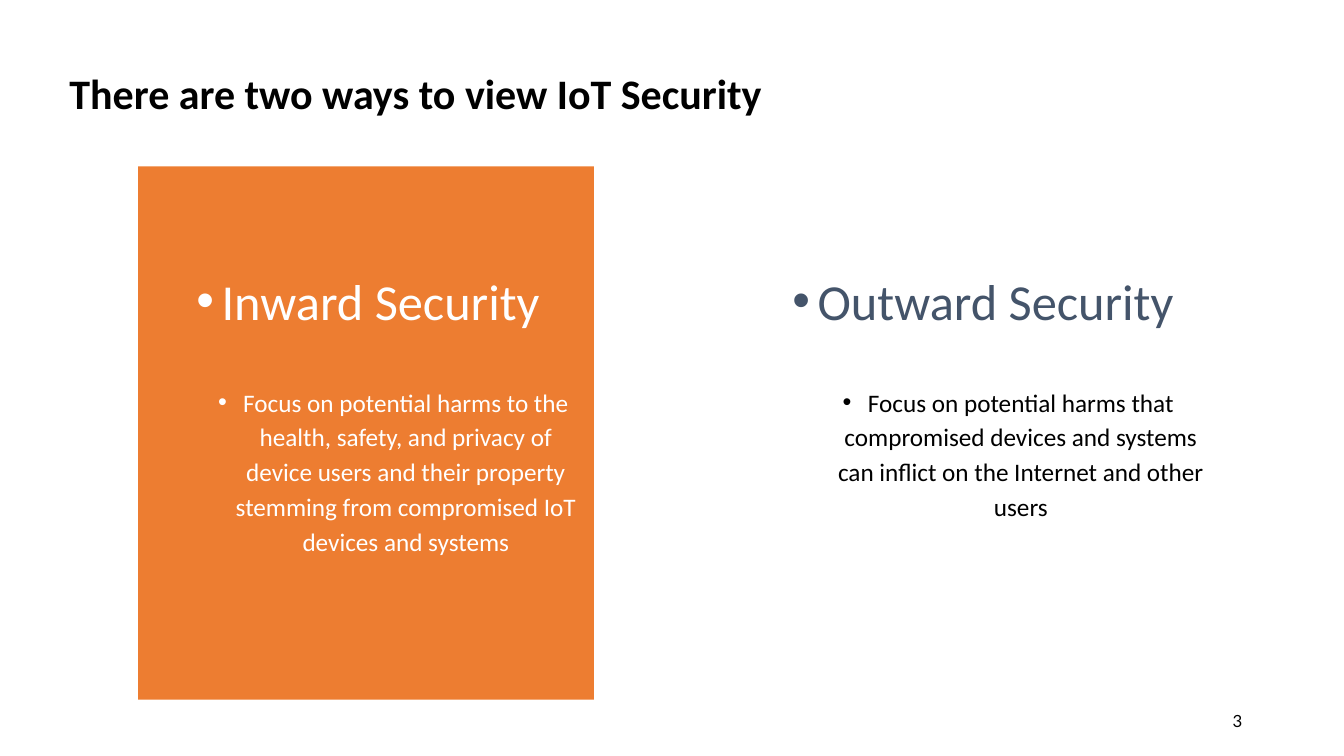
from lxml import etree
from pptx import Presentation
from pptx.dml.color import RGBColor
from pptx.enum.shapes import MSO_SHAPE
from pptx.enum.text import MSO_ANCHOR, PP_ALIGN
from pptx.oxml.ns import qn
from pptx.util import Inches, Pt

RECT = MSO_SHAPE.RECTANGLE
TOP, MIDDLE = MSO_ANCHOR.TOP, MSO_ANCHOR.MIDDLE
LEFT, CENTER, RIGHT = PP_ALIGN.LEFT, PP_ALIGN.CENTER, PP_ALIGN.RIGHT
COLORS = {"black": "000000", "white": "FFFFFF", "slate": "44546A", "orange": "ED7D31"}
HEAD = {"line_spacing": 1.15, "space_before": Pt(10), "space_after": Pt(32)}
BODY = {"line_spacing": 1.15, "space_before": Pt(5), "space_after": Pt(0)}


def color(name):
    """Return the named colour."""
    return RGBColor.from_string(COLORS[name])


def set_all(item, values):
    """Set each attribute of an item from a dict."""
    for name, value in values.items():
        setattr(item, name, value)


def write(para, text, size, tint, align, font="Calibri", bold=False, **space):
    """Fill a paragraph with one formatted run."""
    set_all(para, {"alignment": align, **space})
    run = para.add_run()
    run.text = text
    set_all(run.font, {"name": font, "size": Pt(size), "bold": bold})
    run.font.color.rgb = color(tint)


def add_bullet(para, indent):
    """Give a paragraph a hanging bullet."""
    props = para._p.get_or_add_pPr()
    props.set("marL", str(Inches(indent)))
    props.set("indent", str(Inches(-0.25)))
    font = etree.SubElement(props, qn("a:buFont"))
    font.set("typeface", "Arial")
    mark = etree.SubElement(props, qn("a:buChar"))
    mark.set("char", "•")


def add_label(slide, box, text, size, align, **style):
    """Add a single line of text, centred vertically."""
    frame = slide.shapes.add_textbox(*map(Inches, box)).text_frame
    set_all(frame, {"word_wrap": True, "vertical_anchor": MIDDLE})
    write(frame.paragraphs[0], text, size, "black", align, **style)


def add_panel(slide, left, width, pads, fill, head, body):
    """Add a filled panel with a bulleted heading and body."""
    box = map(Inches, (left, 1.65, width, 5.29))
    panel = slide.shapes.add_shape(RECT, *box)
    panel.shadow.inherit = False
    panel.fill.solid()
    panel.fill.fore_color.rgb = color(fill)
    panel.line.fill.background()
    frame = panel.text_frame
    set_all(frame, {
        "word_wrap": True, "vertical_anchor": TOP,
        "margin_left": Inches(pads[0]), "margin_right": Inches(pads[1]),
        "margin_top": Inches(0.94), "margin_bottom": Inches(0.05),
    })
    title, detail = frame.paragraphs[0], frame.add_paragraph()
    detail.level = 1
    write(title, head[0], 36, head[1], CENTER, **HEAD)
    write(detail, body[0], 18, body[1], CENTER, **BODY)
    add_bullet(title, 0.25)
    add_bullet(detail, 0.75)


def main():
    """Build and save the slide."""
    deck = Presentation()
    set_all(deck, {"slide_width": Inches(13.33), "slide_height": Inches(7.5)})
    slide = deck.slides.add_slide(deck.slide_layouts[6])
    add_label(slide, (0.59, 0.62, 12.16, 0.67),
              "There are two ways to view IoT Security", 30, LEFT,
              bold=True, line_spacing=0.9)
    add_panel(slide, 7.46, 4.58, (0.04, 0.04), "white",
              ("Outward Security", "slate"),
              ("Focus on potential harms that compromised devices and systems "
               "can inflict on the Internet and other users", "black"))
    add_panel(slide, 1.37, 4.52, (0.12, 0.08), "orange",
              ("Inward Security", "white"),
              ("Focus on potential harms to the health, safety, and privacy of "
               "device users and their property stemming from compromised IoT "
               "devices and systems", "white"))
    add_label(slide, (9.42, 6.95, 3, 0.4), "3", 12, RIGHT, font="Lato")
    deck.save("out.pptx")


if __name__ == "__main__":
    main()
